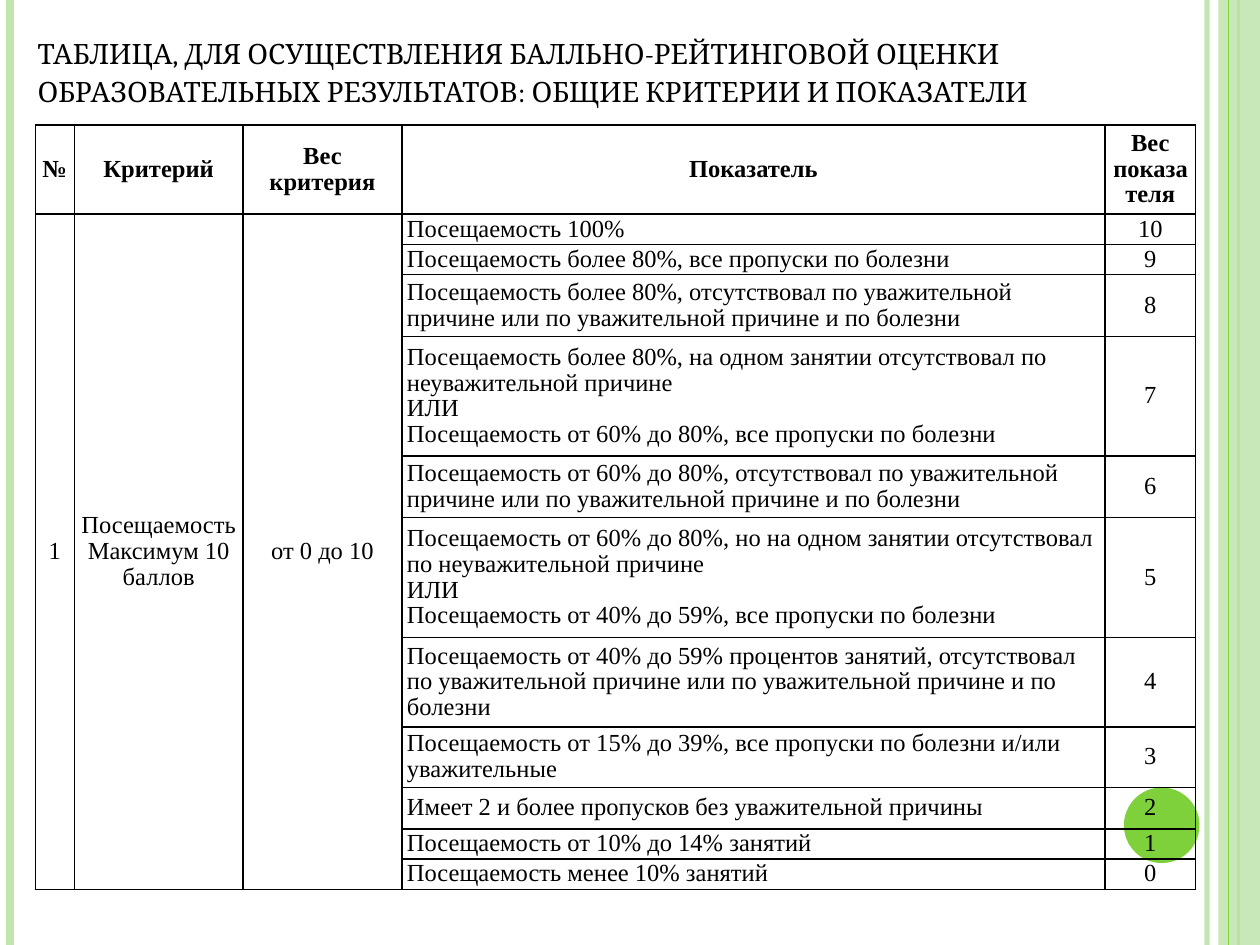
from lxml.etree import SubElement
from pptx import Presentation
from pptx.dml.color import RGBColor
from pptx.enum.shapes import MSO_CONNECTOR, MSO_SHAPE
from pptx.enum.text import MSO_ANCHOR, PP_ALIGN
from pptx.oxml.ns import qn
from pptx.util import Inches, Pt

WIDE, HIGH = 10, 7.5
PALE, GREEN, BLACK = "C0E5AF", "7FD13B", "000000"
COLS = [0.31, 1.34, 1.26, 5.58, 0.72]
ROWS = [0.71, 0.24, 0.24, 0.49, 0.95, 0.49, 0.95, 0.71, 0.48, 0.33, 0.24, 0.24]
TITLE = ("таблица, для осуществления балльно-рейтинговой оценки "
         "образовательных результатов: общие критерии и показатели")
HEADS = ["№", "Критерий", "Вес критерия", "Показатель", "Вес показателя"]
GROUP = ["1", "Посещаемость\nМаксимум 10 баллов", "от 0 до 10"]
# Listed from the highest score, 10, down to 0
MARKS = [
    "Посещаемость 100%",
    "Посещаемость более 80%, все пропуски по болезни",
    "Посещаемость более 80%, отсутствовал по уважительной причине "
    "или по уважительной причине и по болезни",
    "Посещаемость более 80%, на одном занятии отсутствовал по "
    "неуважительной причине\nИЛИ\n"
    "Посещаемость от 60% до 80%, все пропуски по болезни",
    "Посещаемость от 60% до 80%, отсутствовал по уважительной причине "
    "или по уважительной причине и по болезни",
    "Посещаемость от 60% до 80%, но на одном занятии отсутствовал по "
    "неуважительной причине\nИЛИ\n"
    "Посещаемость от 40% до 59%, все пропуски по болезни",
    "Посещаемость от 40% до 59% процентов занятий, отсутствовал по "
    "уважительной причине или по уважительной причине и по болезни",
    "Посещаемость от 15% до 39%, все пропуски по болезни и/или уважительные",
    "Имеет 2 и более пропусков без уважительной причины",
    "Посещаемость от 10% до 14% занятий",
    "Посещаемость менее 10% занятий",
]


def paint(color, tone, alpha=100):
    """Set a solid fill or line fill, with alpha in percent."""
    color.solid()
    color.fore_color.rgb = RGBColor.from_string(tone)
    if alpha < 100:
        node = color.fore_color._xFill.find(qn("a:srgbClr"))
        SubElement(node, qn("a:alpha"), val=str(alpha * 1000))


def stripe(slide, x, width, tone, alpha=100):
    """Draw a line down the whole slide."""
    line = slide.shapes.add_connector(
        MSO_CONNECTOR.STRAIGHT, Inches(x), 0, Inches(x), Inches(HIGH))
    line.line.width = Pt(width)
    paint(line.line.fill, tone, alpha)
    SubElement(line._element.spPr, qn("a:effectLst"))


def shape(slide, kind, box, tone, alpha=100):
    item = slide.shapes.add_shape(kind, *map(Inches, box))
    item.shadow.inherit = False
    item.line.fill.background()
    paint(item.fill, tone, alpha)


def write(frame, text, font="Times New Roman", size=14, bold=False,
          align=PP_ALIGN.LEFT, space=0.95, small=False):
    frame.word_wrap = True
    frame.text = text
    for para in frame.paragraphs:
        para.alignment = align
        para.line_spacing = space
        for run in para.runs:
            run.font.name, run.font.size = font, Pt(size)
            run.font.bold = bold
            paint(run.font.fill, BLACK)
            if small:
                run.font._element.set("cap", "small")


def title(slide):
    box = slide.shapes.add_textbox(*map(Inches, (0.2, 0.21, 9.07, 0.71)))
    box.text_frame.vertical_anchor = MSO_ANCHOR.BOTTOM
    write(box.text_frame, TITLE, font="Cambria", size=20, space=0.9, small=True)


def edge(cell):
    """Give a cell thin black borders and no fill."""
    props = cell._tc.get_or_add_tcPr()
    for side in ("lnL", "lnR", "lnT", "lnB"):
        line = SubElement(props, qn("a:" + side), w=str(Pt(1)))
        fill = SubElement(line, qn("a:solidFill"))
        SubElement(fill, qn("a:srgbClr"), val=BLACK)
    cell.fill.background()


def fill_cell(cell, text, **form):
    cell.margin_left = cell.margin_right = Inches(0.04)
    cell.margin_top = cell.margin_bottom = 0
    cell.vertical_anchor = MSO_ANCHOR.MIDDLE
    write(cell.text_frame, text, **form)


def grid(slide):
    table = slide.shapes.add_table(
        len(ROWS), len(COLS), Inches(0.28), Inches(0.99),
        Inches(sum(COLS)), Inches(sum(ROWS))).table
    table.first_row = table.horz_banding = False
    for col, width in zip(table.columns, COLS):
        col.width = Inches(width)
    for row, height in zip(table.rows, ROWS):
        row.height = Inches(height)
    for cell in table.iter_cells():
        edge(cell)
    mid = PP_ALIGN.CENTER
    for col, text in enumerate(HEADS):
        fill_cell(table.cell(0, col), text, bold=True, align=mid)
    for col, text in enumerate(GROUP):
        top = table.cell(1, col)
        top.merge(table.cell(len(MARKS), col))
        fill_cell(top, text, align=mid)
    for row, text in enumerate(MARKS, 1):
        fill_cell(table.cell(row, 3), text)
        fill_cell(table.cell(row, 4), str(len(MARKS) - row), align=mid)


def main():
    deck = Presentation()
    deck.slide_width, deck.slide_height = Inches(WIDE), Inches(HIGH)
    slide = deck.slides.add_slide(deck.slide_layouts[6])
    stripe(slide, 9.58, 3, PALE, 93)
    stripe(slide, 0.08, 4.5, PALE)
    stripe(slide, 9.83, 1.5, GREEN)
    shape(slide, MSO_SHAPE.RECTANGLE, (9.67, 0, 0.33, HIGH), PALE, 87)
    stripe(slide, 9.75, 0.75, GREEN)
    shape(slide, MSO_SHAPE.OVAL, (8.92, 6.25, 0.6, 0.6), GREEN)
    title(slide)
    grid(slide)
    deck.save("out.pptx")


if __name__ == "__main__":
    main()
